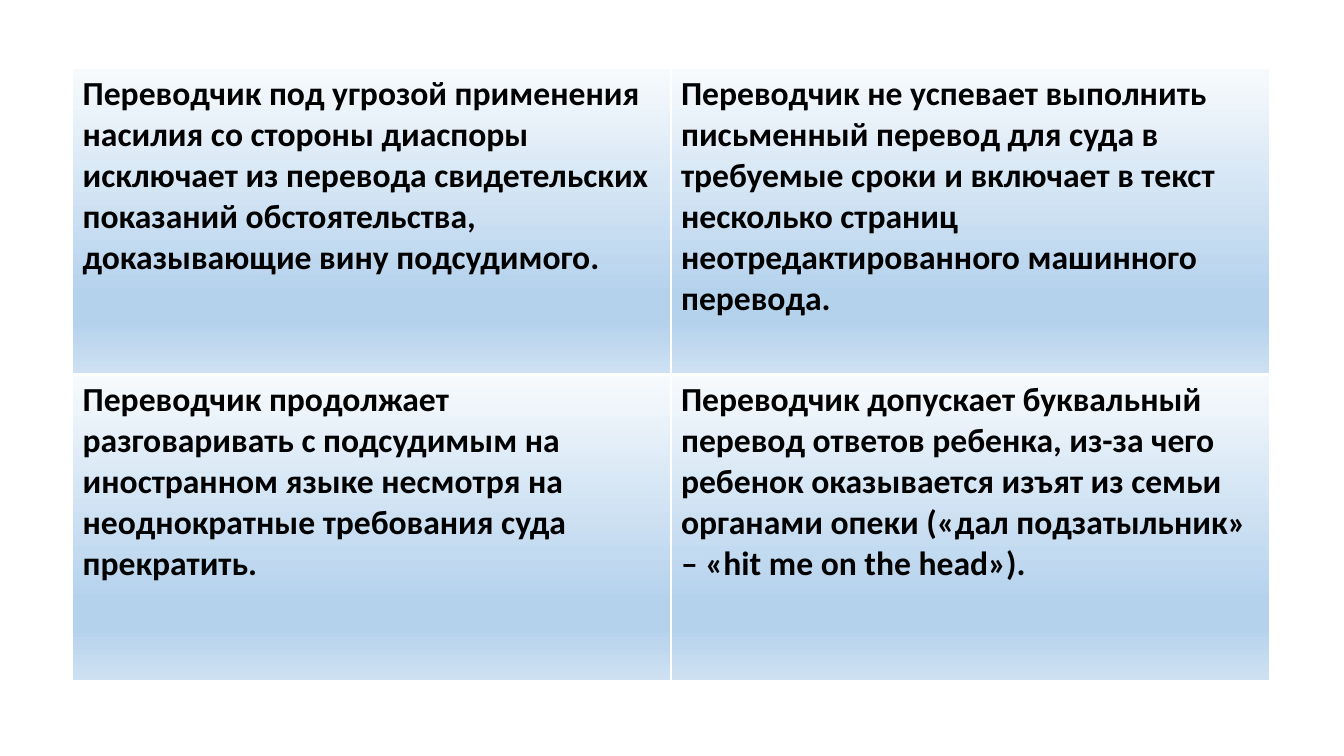
from dataclasses import dataclass

from lxml.etree import SubElement
from pptx import Presentation
from pptx.dml.color import RGBColor
from pptx.oxml.ns import qn
from pptx.util import Inches, Pt

CASES = [
    [
        "Переводчик под угрозой применения насилия со стороны диаспоры исключает из "
        "перевода свидетельских показаний обстоятельства, доказывающие вину подсудимого.",
        "Переводчик не успевает выполнить письменный перевод для суда в требуемые сроки "
        "и включает в текст несколько страниц неотредактированного машинного перевода.",
    ],
    [
        "Переводчик продолжает разговаривать с подсудимым на иностранном языке несмотря "
        "на неоднократные требования суда прекратить.",
        "Переводчик допускает буквальный перевод ответов ребенка, из-за чего ребенок "
        "оказывается изъят из семьи органами опеки («дал подзатыльник» – "
        "«hit me on the head»).",
    ],
]


@dataclass(frozen=True)
class Theme:
    font: str = "Calibri"
    size: int = 24
    ink: str = "000000"
    rule: str = "FFFFFF"
    thin: int = 1
    thick: int = 3
    stops: tuple = ((0, "F7FAFD"), (74, "B5D2EC"), (83, "B5D2EC"), (100, "CEE1F2"))
    angle: int = 90


THEME = Theme()
LEFT, TOP, WIDTH, HEIGHT = 0.72, 0.68, 11.87, 6.07


def add_color(parent, color):
    SubElement(parent, qn("a:srgbClr"), val=color)


def add_edge(props, side, width):
    line = SubElement(props, qn(f"a:ln{side}"), w=str(Pt(width)))
    add_color(SubElement(line, qn("a:solidFill")), THEME.rule)


def add_fade(props):
    fade = SubElement(props, qn("a:gradFill"), rotWithShape="1")
    stops = SubElement(fade, qn("a:gsLst"))
    for place, color in THEME.stops:
        add_color(SubElement(stops, qn("a:gs"), pos=str(place * 1000)), color)
    SubElement(fade, qn("a:lin"), ang=str(THEME.angle * 60000), scaled="0")


def fill_cell(cell, text, edges):
    cell.text = text
    font = cell.text_frame.paragraphs[0].font
    font.name, font.size, font.bold = THEME.font, Pt(THEME.size), True
    font.color.rgb = RGBColor.from_string(THEME.ink)
    props = cell._tc.get_or_add_tcPr()
    for side, width in edges.items():
        add_edge(props, side, width)
    add_fade(props)


def add_cases(slide):
    rows, cols = len(CASES), len(CASES[0])
    table = slide.shapes.add_table(
        rows, cols, Inches(LEFT), Inches(TOP), Inches(WIDTH), Inches(HEIGHT)
    ).table
    table.first_row = table.horz_banding = False
    for r, row in enumerate(CASES):
        edges = {
            "L": THEME.thin,
            "R": THEME.thin,
            "T": THEME.thick if r else THEME.thin,
            "B": THEME.thin if r else THEME.thick,
        }
        for c, text in enumerate(row):
            fill_cell(table.cell(r, c), text, edges)


def main():
    deck = Presentation()
    deck.slide_width, deck.slide_height = Inches(13.33), Inches(7.5)
    add_cases(deck.slides.add_slide(deck.slide_layouts[6]))
    deck.save("out.pptx")


if __name__ == "__main__":
    main()
